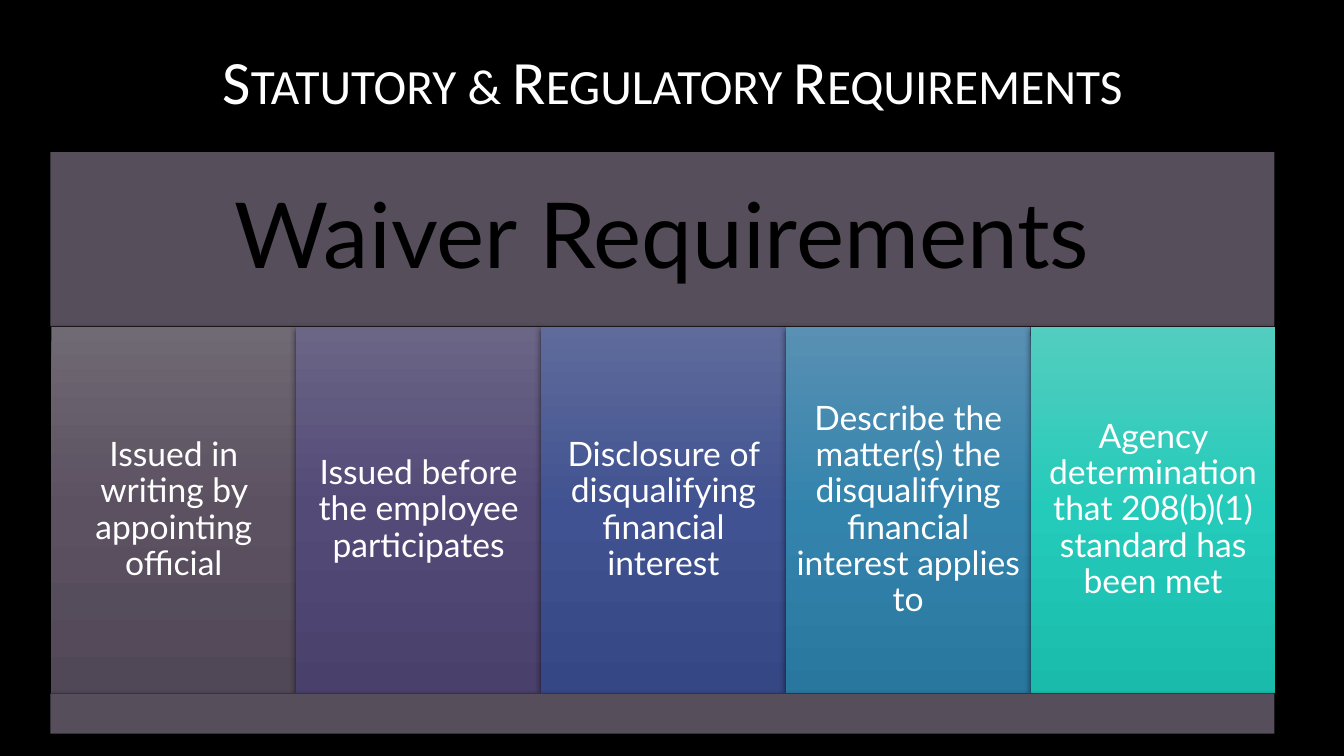
from copy import deepcopy
from pptx import Presentation
from pptx.dml.color import RGBColor
from pptx.enum.shapes import MSO_SHAPE
from pptx.enum.text import MSO_ANCHOR, PP_ALIGN
from pptx.oxml import parse_xml
from pptx.util import Inches, Pt

TITLE = "Statutory & Regulatory Requirements"
HEAD = "Waiver Requirements"
CARDS = [
    ("Issued in writing by appointing official", ("706A74", "5B5161", "514857")),
    ("Issued before the employee participates", ("6B6586", "534A78", "49406C")),
    ("Disclosure of disqualifying financial interest", ("5F6B9B", "405291", "354784")),
    ("Describe the matter(s) the disqualifying financial interest applies to",
     ("5990B3", "3384AD", "29779E")),
    ("Agency determination that 208(b)(1) standard has been met",
     ("53CDBF", "24CBBA", "1ABBAB")),
]
BAND = ("574E5C",)
LEFT, TOP, WIDTH = 0.5, 1.51, 12.14
HEAD_H, CARD_H, FOOT_H = 1.73, 3.64, 0.4
SHADOW = (
    '<a:outerShdw xmlns:a="http://schemas.openxmlformats.org/drawingml/2006/main" '
    'blurRad="57150" dist="19050" dir="5400000" algn="ctr" rotWithShape="0">'
    '<a:srgbClr val="000000"><a:alpha val="63000"/></a:srgbClr></a:outerShdw>'
)


def color(code):
    return RGBColor.from_string(code)


def write(frame, text, size, font, code):
    frame.word_wrap = True
    frame.vertical_anchor = MSO_ANCHOR.MIDDLE
    para = frame.paragraphs[0]
    para.alignment = PP_ALIGN.CENTER
    para.line_spacing = 0.9
    run = para.add_run()
    run.text = text
    run.font.size = Pt(size)
    run.font.name = font
    run.font.color.rgb = color(code)
    return run


def paint(fill, codes):
    if len(codes) == 1:
        fill.solid()
        fill.fore_color.rgb = color(codes[0])
        return
    fill.gradient()
    fill.gradient_angle = 270
    first = fill.gradient_stops[0]
    first.color.rgb = color(codes[0])
    node = fill._fill._gradFill.gsLst
    node.insert(1, deepcopy(node[0]))
    for i, (stop, code) in enumerate(zip(fill.gradient_stops, codes)):
        stop.position = i / (len(codes) - 1)
        stop.color.rgb = color(code)


def panel(slide, box, codes, text="", size=24, code="FFFFFF", inset=0.1):
    shape = slide.shapes.add_shape(MSO_SHAPE.RECTANGLE, *map(Inches, box))
    paint(shape.fill, codes)
    shape.line.fill.background()
    shape.shadow.inherit = False
    shape._element.spPr.find(
        "{http://schemas.openxmlformats.org/drawingml/2006/main}effectLst"
    ).append(parse_xml(SHADOW))
    if text:
        frame = shape.text_frame
        frame.margin_left = frame.margin_right = Inches(inset)
        frame.margin_top = frame.margin_bottom = Inches(inset)
        write(frame, text, size, "Lato", code)


def main():
    deck = Presentation()
    deck.slide_width, deck.slide_height = Inches(13.33), Inches(7.5)
    slide = deck.slides.add_slide(deck.slide_layouts[5])
    slide.background.fill.solid()
    slide.background.fill.fore_color.rgb = color("000000")

    title = slide.shapes.title
    title.left, title.top = Inches(0.92), Inches(0.4)
    title.width, title.height = Inches(11.5), Inches(0.88)
    run = write(title.text_frame, TITLE, 44, "Calibri", "FFFFFF")
    run.font._element.set("cap", "small")

    panel(slide, (LEFT, TOP, WIDTH, HEAD_H), BAND, HEAD, 65, "000000", 0.27)
    step = WIDTH / len(CARDS)
    for i, (text, codes) in enumerate(CARDS):
        panel(slide, (LEFT + 0.01 + i * step, TOP + HEAD_H, step, CARD_H), codes, text)
    panel(slide, (LEFT, TOP + HEAD_H + CARD_H, WIDTH, FOOT_H), BAND)
    deck.save("out.pptx")


if __name__ == "__main__":
    main()
